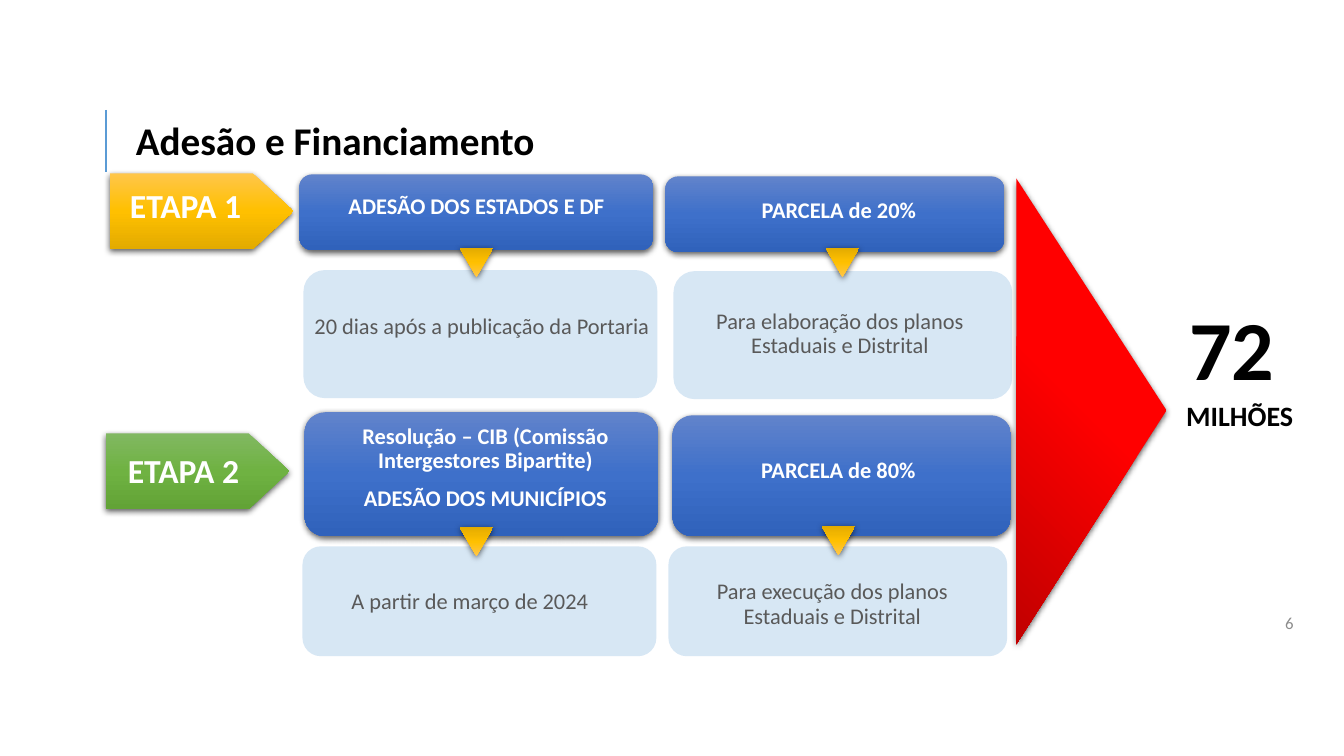
from lxml import etree
from pptx import Presentation
from pptx.dml.color import RGBColor
from pptx.enum.shapes import MSO_CONNECTOR, MSO_SHAPE
from pptx.enum.text import MSO_ANCHOR, PP_ALIGN
from pptx.oxml.ns import qn
from pptx.util import Inches, Pt

ROUND, PENTAGON, TRIANGLE = (MSO_SHAPE.ROUNDED_RECTANGLE, MSO_SHAPE.PENTAGON,
                             MSO_SHAPE.ISOSCELES_TRIANGLE)
LEFT, CENTER, RIGHT = PP_ALIGN.LEFT, PP_ALIGN.CENTER, PP_ALIGN.RIGHT
TOP, MIDDLE = MSO_ANCHOR.TOP, MSO_ANCHOR.MIDDLE

WHITE = RGBColor(0xFF, 0xFF, 0xFF)
BLACK = RGBColor(0, 0, 0)
TEXT_GRAY = RGBColor(0x59, 0x59, 0x59)
PAGE_GRAY = RGBColor(0x8C, 0x8C, 0x8C)
SKY = RGBColor(0x5B, 0x9B, 0xD5)


def ramp(*colors):
    """Return gradient colours from hex strings."""
    return [RGBColor.from_string(c) for c in colors]


BLUE = ramp("6183CB", "3E70CA", "3062BB")
GOLD = ramp("FFC64B", "FFC000", "E3AB00")
GREEN = ramp("81B861", "6FB242", "62A336")
RED = ramp("FF0000", "FF0000", "C00000")


def child(parent, tag, **attrs):
    """Append a drawing element and return it."""
    return etree.SubElement(parent, qn(tag), {k: str(v) for k, v in attrs.items()})


def inside(box, offset):
    """Shift an offset box by the corner of its parent box."""
    return (box[0] + offset[0], box[1] + offset[1], *offset[2:])


def add_shape(s, kind, box, rotation=0, adj=None):
    """Add an unlined preset shape without an inherited shadow."""
    sp = s.shapes.add_shape(kind, *map(Inches, box))
    sp.rotation = rotation
    sp.line.fill.background()
    sp.shadow.inherit = False
    if adj is not None:
        sp.adjustments[0] = adj
    return sp


def add_glossy(s, kind, box, colors, angle=90, rotation=0, adj=None):
    """Add a shape with a three-stop gradient and a soft shadow."""
    sp = add_shape(s, kind, box, rotation, adj)
    sp.fill.gradient()
    sp.fill.gradient_angle = 360 - angle
    stops = sp.element.spPr.find(".//" + qn("a:gsLst"))
    for stop in list(stops):
        stops.remove(stop)
    for i, color in enumerate(colors):
        child(child(stops, "a:gs", pos=i * 50000), "a:srgbClr", val=color)
    shadow = child(sp.element.spPr.find(qn("a:effectLst")), "a:outerShdw",
                   blurRad=Pt(4.5), dist=Pt(1.5), dir=5400000, algn="ctr", rotWithShape=0)
    child(child(shadow, "a:srgbClr", val="000000"), "a:alpha", val=63000)


def add_text(s, box, lines, size, color, bold=False, align=CENTER, anchor=TOP):
    """Add a wrapped text box with one paragraph per line."""
    tf = s.shapes.add_textbox(*map(Inches, box)).text_frame
    tf.word_wrap = True
    tf.vertical_anchor = anchor
    for i, line in enumerate(lines):
        p = tf.paragraphs[0] if i == 0 else tf.add_paragraph()
        p.text = line
        p.alignment = align
        p.line_spacing = 0.9
        if i:
            p.space_before = Pt(10)
        p.font.name, p.font.size, p.font.bold = "Calibri", Pt(size), bold
        p.font.color.rgb = color


def add_title(s, box, title):
    """Draw the heading with its vertical rule on the left of the box."""
    x, y, w, h = box
    rule = s.shapes.add_connector(MSO_CONNECTOR.STRAIGHT, *map(Inches, (x, y, x, y + h)))
    rule.line.color.rgb = SKY
    rule.line.width = Pt(1.5)
    child(rule.element.spPr, "a:effectLst")
    add_text(s, inside(box, (0.2, 0.07, w - 0.2, h)), [title], 28, BLACK, True, LEFT)


def add_stage(s, box, label, label_offset, colors):
    """Draw a stage tag pointing right, with its label."""
    add_glossy(s, PENTAGON, box, colors, adj=0.538)
    add_text(s, inside(box, label_offset), [label], 24, WHITE, True, LEFT)


def add_card(s, head, head_lines, head_offset, body, body_line, body_offset, pointer):
    """Draw a blue header above a pale body, joined by a gold pointer."""
    sp = add_shape(s, ROUND, body)
    sp.fill.solid()
    sp.fill.fore_color.rgb = SKY
    tint = sp.element.spPr.find(qn("a:solidFill"))[0]
    child(tint, "a:alpha", val=24000)
    add_glossy(s, ROUND, head, BLUE)
    add_text(s, inside(head, head_offset), head_lines, 16, WHITE, True)
    add_glossy(s, TRIANGLE, (*pointer, 0.33, 0.29), GOLD, rotation=180)
    add_text(s, inside(body, body_offset), [body_line], 16, TEXT_GRAY)


def add_total(s, box, amount, unit):
    """Draw the red arrowhead filling the box, with the total to its right."""
    x, y, w, h = box
    turned = (x + (w - h) / 2, y + (h - w) / 2, h, w)
    add_glossy(s, TRIANGLE, turned, RED, 45, 90, 0.498)
    add_text(s, inside(box, (w - 0.05, 1.24, 1.39, 0.93)), [amount], 60, BLACK, True)
    add_text(s, inside(box, (w + 0.03, 2.17, 1.39, 0.37)), [unit], 20, BLACK, True)


def main():
    """Build and save the slide."""
    prs = Presentation()
    prs.slide_width, prs.slide_height = Inches(13.33), Inches(7.5)
    s = prs.slides.add_slide(prs.slide_layouts[6])

    add_title(s, (1.05, 1.09, 5.68, 0.62), "Adesão e Financiamento")
    add_stage(s, (1.09, 1.72, 1.82, 0.75), "ETAPA 1", (0.1, 0.11, 1.4, 0.4), GOLD)
    add_stage(s, (1.05, 4.3, 1.82, 0.75), "ETAPA 2", (0.12, 0.16, 1.4, 0.4), GREEN)

    cards = [
        ((2.97, 1.73, 3.51, 0.75), ["ADESÃO DOS ESTADOS E DF"], (0.15, 0.16, 3.21, 0.54),
         (3.01, 2.68, 3.51, 1.27), "20 dias após a publicação da Portaria",
         (-0.05, 0.4, 3.64, 0.42), (4.56, 2.46)),
        ((6.6, 1.75, 3.36, 0.75), ["PARCELA de 20%"], (0.05, 0.18, 3.34, 0.54),
         (6.68, 2.69, 3.36, 1.27), "Para elaboração dos planos Estaduais e Distrital",
         (0.14, 0.34, 3.02, 0.48), (8.19, 2.46)),
        ((3.02, 4.09, 3.51, 1.23),
         ["Resolução – CIB (Comissão Intergestores Bipartite)", "ADESÃO DOS MUNICÍPIOS"],
         (0.19, 0.08, 3.21, 0.98),
         (3, 5.42, 3.51, 1.09), "A partir de março de 2024",
         (0.21, 0.39, 2.9, 0.32), (4.56, 5.23)),
        ((6.67, 4.12, 3.36, 1.2), ["PARCELA de 80%"], (0.04, 0.39, 3.21, 0.54),
         (6.63, 5.42, 3.36, 1.09), "Para execução dos planos Estaduais e Distrital",
         (-0.02, 0.29, 3.29, 0.48), (8.15, 5.22)),
    ]
    for card in cards:
        add_card(s, *card)

    add_total(s, (10.08, 1.77, 1.49, 4.62), "72", "MILHÕES")
    add_text(s, (9.93, 5.99, 3, 0.4), ["6"], 12, PAGE_GRAY, align=RIGHT, anchor=MIDDLE)
    prs.save("out.pptx")


if __name__ == "__main__":
    main()
